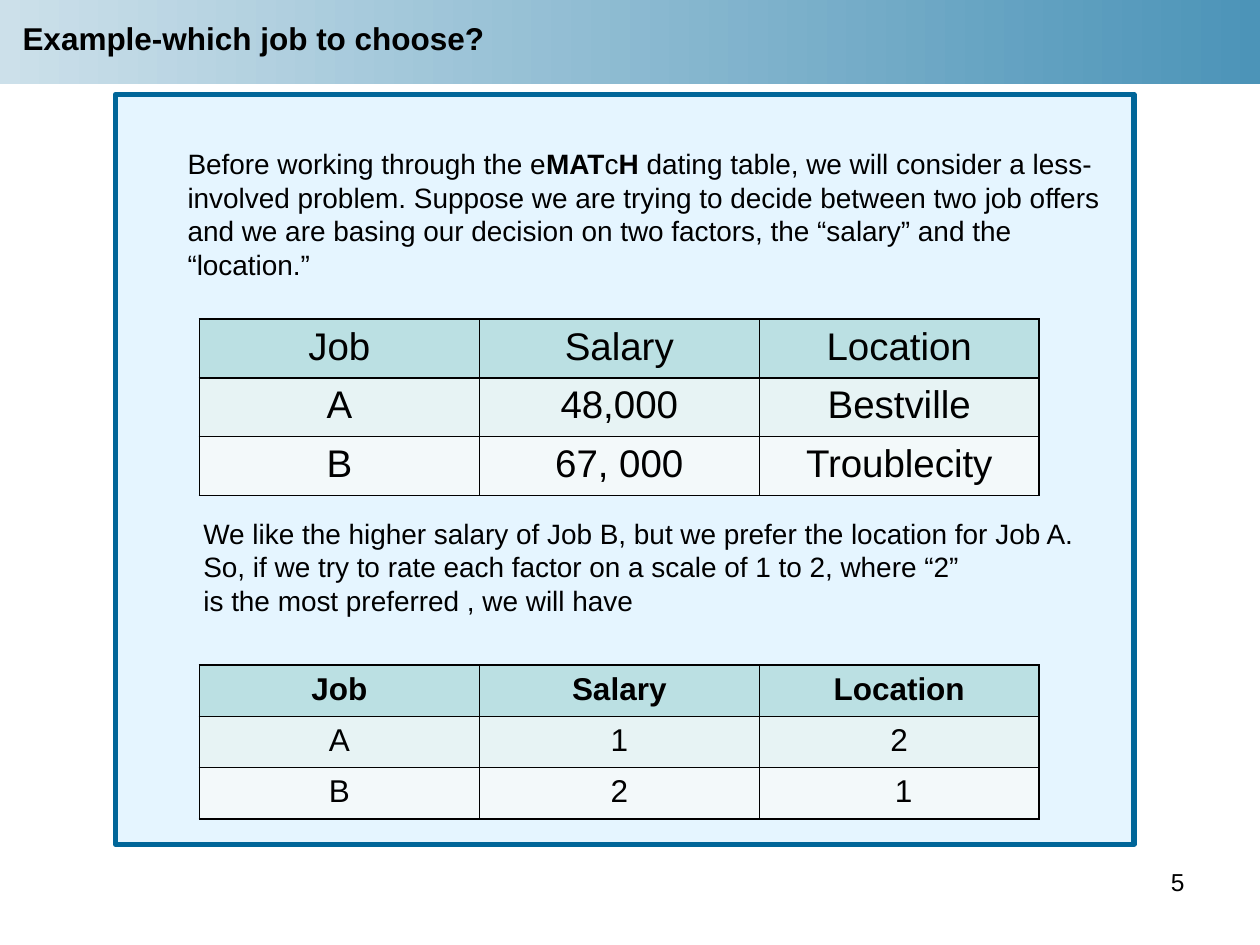
from lxml import etree
from pptx import Presentation
from pptx.dml.color import RGBColor
from pptx.enum.shapes import MSO_SHAPE
from pptx.enum.text import MSO_ANCHOR, MSO_AUTO_SIZE, PP_ALIGN
from pptx.oxml.ns import qn
from pptx.util import Cm, Pt

RECTANGLE = MSO_SHAPE.RECTANGLE
TOP, MIDDLE = MSO_ANCHOR.TOP, MSO_ANCHOR.MIDDLE
NO_FIT = MSO_AUTO_SIZE.NONE
LEFT, CENTER, RIGHT = PP_ALIGN.LEFT, PP_ALIGN.CENTER, PP_ALIGN.RIGHT

FONT = "Arial"
COLORS = {
    "text": "000000",
    "band_start": "CCE0EA",
    "band_end": "4C94B8",
    "panel": "CCECFF",
    "frame": "006699",
    "rows": ["BBE0E3", "E7F3F4", "F3F9FA"],
}

INTRO = [
    ("Before working through the e", False),
    ("MAT", True),
    ("c", False),
    ("H", True),
    (" dating table, we will consider a less-involved problem. Suppose we are "
     "trying to decide between two job offers and we are basing our decision on "
     "two factors, the “salary” and the “location.”", False),
]
RATING_LINES = [
    "We like the higher salary of Job B, but we prefer the location for Job A.",
    "So, if we try to rate each factor on a scale of 1 to 2, where “2”",
    "is the most preferred , we will have",
]
HEADINGS = ["Job", "Salary", "Location"]
OFFERS = [HEADINGS, ["A", "48,000", "Bestville"], ["B", "67, 000", "Troublecity"]]
RATINGS = [HEADINGS, ["A", "1", "2"], ["B", "2", " 1"]]


def rgb(value):
    return RGBColor.from_string(value)


def place(part, left, top, width, height):
    part.left, part.top, part.width, part.height = left, top, width, height


def add_run(paragraph, text, size, bold=False):
    run = paragraph.add_run()
    run.text = text
    run.font.name = FONT
    run.font.size = Pt(size)
    run.font.bold = bold
    run.font.color.rgb = rgb(COLORS["text"])


def set_indent(paragraph, margin):
    properties = paragraph._p.get_or_add_pPr()
    properties.set("marL", str(margin))
    properties.set("indent", "0")
    etree.SubElement(properties, qn("a:buNone"))


def add_header(slide, left, top, width, height):
    band = slide.shapes.add_shape(RECTANGLE, left, top, width, height)
    band.shadow.inherit = False
    band.line.fill.background()
    band.fill.gradient()
    band.fill.gradient_angle = 0
    for stop, key in zip(band.fill.gradient_stops, ("band_start", "band_end")):
        stop.color.rgb = rgb(COLORS[key])
    title = slide.shapes.title
    place(title, left + Cm(0.2), top + Cm(0.25), Cm(9.84), Cm(1.02))
    frame = title.text_frame
    frame.word_wrap = False
    frame.auto_size = NO_FIT
    frame.vertical_anchor = MIDDLE
    frame.paragraphs[0].alignment = LEFT
    add_run(frame.paragraphs[0], "Example-which job to choose?", 18, True)
    slide.shapes._spTree.remove(band._element)
    slide.shapes._spTree.insert(2, band._element)


def add_explanation(slide, left, top, width, height):
    panel = slide.placeholders[1]
    place(panel, left, top, width, height)
    panel.fill.solid()
    panel.fill.fore_color.rgb = rgb(COLORS["panel"])
    color = panel._element.spPr.find(qn("a:solidFill"))[0]
    etree.SubElement(color, qn("a:alpha"), val="50000")
    panel.line.color.rgb = rgb(COLORS["frame"])
    panel.line.width = Pt(3)
    frame = panel.text_frame
    frame.word_wrap = True
    frame.auto_size = NO_FIT
    frame.vertical_anchor = TOP
    frame.margin_left = frame.margin_right = Cm(0.5)
    frame.margin_top, frame.margin_bottom = Cm(1.06), Cm(0.38)
    intro = frame.paragraphs[0]
    intro.space_before = Pt(0)
    set_indent(intro, Cm(0.95))
    for text, bold in INTRO:
        add_run(intro, text, 16, bold)
    for index, line in enumerate(RATING_LINES):
        paragraph = frame.add_paragraph()
        paragraph.space_before = Pt(0 if index else 134.4)
        set_indent(paragraph, Cm(1.27))
        add_run(paragraph, line, 16)


def add_border(cell):
    properties = cell._tc.get_or_add_tcPr()
    for index, side in enumerate(("lnL", "lnR", "lnT", "lnB")):
        line = etree.Element(qn("a:" + side), w=str(Pt(1)))
        fill = etree.SubElement(line, qn("a:solidFill"))
        etree.SubElement(fill, qn("a:srgbClr"), val=COLORS["text"])
        properties.insert(index, line)


def add_job_table(slide, rows, size, bold_header, left, top, width, height):
    table = slide.shapes.add_table(
        len(rows), len(rows[0]), left, top, width, height).table
    for row_index, values in enumerate(rows):
        for column_index, value in enumerate(values):
            cell = table.cell(row_index, column_index)
            cell.fill.solid()
            cell.fill.fore_color.rgb = rgb(COLORS["rows"][row_index])
            add_border(cell)
            paragraph = cell.text_frame.paragraphs[0]
            paragraph.alignment = CENTER
            add_run(paragraph, value, size, bold_header and row_index == 0)


def add_page_number(slide, left, top, width, height):
    frame = slide.shapes.add_textbox(left, top, width, height).text_frame
    frame.word_wrap = True
    frame.paragraphs[0].alignment = RIGHT
    add_run(frame.paragraphs[0], "5", 14)


def main():
    deck = Presentation()
    deck.slide_width, deck.slide_height = Cm(25.4), Cm(19.05)
    slide = deck.slides.add_slide(deck.slide_layouts[1])
    add_header(slide, 0, 0, deck.slide_width, Cm(1.7))
    add_explanation(slide, Cm(2.33), Cm(1.9), Cm(20.53), Cm(15.12))
    add_job_table(slide, OFFERS, 22, False, Cm(4.02), Cm(6.43), Cm(16.93), Cm(3.56))
    add_job_table(slide, RATINGS, 18, True, Cm(4.02), Cm(13.41), Cm(16.93), Cm(3.1))
    add_page_number(slide, Cm(18.2), Cm(17.35), Cm(5.93), Cm(1.32))
    deck.save("out.pptx")


if __name__ == "__main__":
    main()
